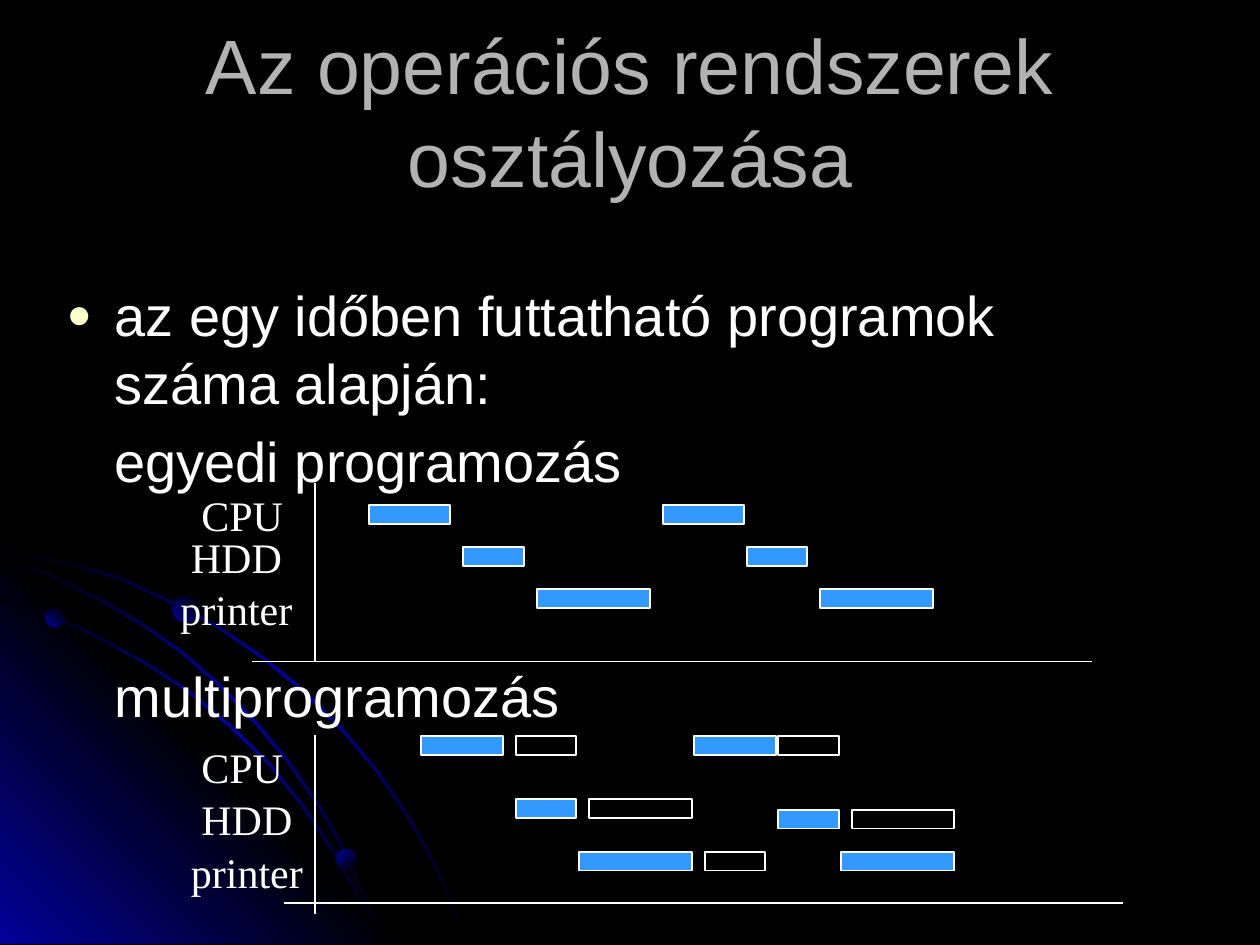
from lxml import etree
from pptx import Presentation, util as u
from pptx.dml.color import RGBColor
from pptx.enum import shapes, text
from pptx.oxml import parse_xml
from pptx.oxml.ns import nsdecls, qn

BLACK = RGBColor(0x00, 0x00, 0x00)
NAVY = RGBColor(0x01, 0x01, 0x99)
GREY = RGBColor(0xB2, 0xB2, 0xB2)
WHITE = RGBColor(0xFF, 0xFF, 0xFF)
BLUE = RGBColor(0x33, 0x99, 0xFF)
CREAM = RGBColor(0xFF, 0xFF, 0xCC)

TITLE = "Az operációs rendszerek osztályozása"
# text, bulleted, space before in points
BODY = [
    ("az egy időben futtatható programok száma alapján:", True, 6.4),
    ("egyedi programozás", False, 6.4),
    ("multiprogramozás", False, 96),
]

# Timing diagrams on a grid of 12 units to the inch
UNIT = 1 / 12
BAR_HEIGHT, BAR_INSET = 0.15, 0.01
DIAGRAMS = [
    {  # single programming
        "labels": [("CPU", 18, 46, 13), ("HDD", 17, 50, 13), ("printer", 16, 55, 16)],
        "axes": [(24, 63, 104, 63), (30, 46, 30, 63)],
        # column, row, length
        "filled": [(35, 48, 8), (44, 52, 6), (51, 56, 11),
                   (63, 48, 8), (71, 52, 6), (78, 56, 11)],
        "hollow": [],
    },
    {  # multiprogramming
        "labels": [("CPU", 18, 70, 13), ("HDD", 18, 75, 13), ("printer", 17, 80, 16)],
        "axes": [(27, 86, 107, 86), (30, 70, 30, 87)],
        "filled": [(40, 70, 8), (49, 76, 6), (55, 81, 11),
                   (66, 70, 8), (74, 77, 6), (80, 81, 11)],
        "hollow": [(49, 70, 6), (56, 76, 10), (67, 81, 6),
                   (81, 77, 10), (74, 70, 6)],
    },
]

# Background: upper edges of the arcs, the corner glow and the planets
ARC_WIDTH = 0.015
ARCS = [
    [(0, 4.35), (0.57, 4.47), (0.98, 4.59), (1.36, 4.77), (1.74, 4.97), (2.09, 5.21),
     (2.42, 5.48), (2.72, 5.78), (3, 6.11), (3.25, 6.48), (3.39, 6.73), (3.52, 6.98),
     (3.62, 7.23), (3.72, 7.49)],
    [(0, 4.75), (0.41, 4.88), (0.79, 5.05), (1.17, 5.26), (1.52, 5.49), (1.84, 5.76),
     (2.15, 6.06), (2.42, 6.4), (2.66, 6.76), (2.86, 7.12), (2.96, 7.3), (3.03, 7.49)],
    [(0, 4.42), (0.39, 4.55), (0.76, 4.73), (1.11, 4.93), (1.44, 5.16), (1.75, 5.43),
     (2.04, 5.73), (2.29, 6.03), (2.54, 6.39), (2.69, 6.65), (2.82, 6.93), (2.94, 7.2),
     (3.03, 7.49)],
]
GLOW = [(0, 4.27), (3.22, 7.49), (0, 7.49)]
PLANETS = [(0.36, 4.83, 0.15, 315), (2.67, 6.74, 0.16, 45), (1.37, 4.73, 0.21, 315)]

deck = Presentation()
deck.slide_width, deck.slide_height = u.Inches(10), u.Inches(7.5)
page = deck.slides.add_slide(deck.slide_layouts[5])
page.background.fill.solid()
page.background.fill.fore_color.rgb = BLACK


def inches(*values):
    return [u.Inches(value) for value in values]


def style_text(para, font, size, color):
    for span in para.runs:
        span.font.name, span.font.size = font, u.Pt(size)
        span.font.color.rgb = color


def fill_gradient(shape, colors, angle):
    shape.shadow.inherit = False
    shape.line.fill.background()
    step = 100000 // (len(colors) - 1)
    stops = "".join(f'<a:gs pos="{i * step}"><a:srgbClr val="{color}"/></a:gs>'
                    for i, color in enumerate(colors))
    gradient = parse_xml(f'<a:gradFill {nsdecls("a")} rotWithShape="1"><a:gsLst>{stops}'
                         f'</a:gsLst><a:lin ang="{angle * 60000}" scaled="0"/></a:gradFill>')
    shape.element.spPr.find(qn("a:ln")).addprevious(gradient)


def add_outline(points, colors, angle):
    start, *rest = [inches(*point) for point in points]
    builder = page.shapes.build_freeform(*start)
    builder.add_line_segments(rest, close=True)
    fill_gradient(builder.convert_to_shape(), colors, angle)


def add_bar(column, row, length, filled):
    bar = page.shapes.add_shape(
        shapes.MSO_SHAPE.RECTANGLE,
        *inches(column * UNIT + BAR_INSET, row * UNIT + BAR_INSET,
                length * UNIT - 2 * BAR_INSET, BAR_HEIGHT))
    bar.shadow.inherit = False
    if filled:
        bar.fill.solid()
        bar.fill.fore_color.rgb = BLUE
    else:
        bar.fill.background()
    bar.line.color.rgb, bar.line.width = WHITE, u.Pt(1)


def add_axis(*ends):
    axis = page.shapes.add_connector(shapes.MSO_CONNECTOR.STRAIGHT,
                                     *inches(*(end * UNIT for end in ends)))
    axis.line.color.rgb, axis.line.width = WHITE, u.Pt(1)
    etree.SubElement(axis.element.spPr, qn("a:effectLst"))


def add_label(name, column, row, width):
    box = page.shapes.add_textbox(*inches(column * UNIT, row * UNIT, width * UNIT, 0.5))
    box.text_frame.word_wrap = True
    box.text_frame.text = name
    style_text(box.text_frame.paragraphs[0], "Times New Roman", 24, WHITE)


# Background
for number, edge in enumerate(ARCS):
    lower = [(max(x - ARC_WIDTH, 0), min(y + ARC_WIDTH, 7.49)) for x, y in reversed(edge)]
    add_outline(edge + lower, [BLACK, NAVY, BLACK], 45)
    if number == 0:
        add_outline(GLOW, [NAVY, BLACK, NAVY], 315)
for left, top, size, angle in PLANETS:
    planet = page.shapes.add_shape(shapes.MSO_SHAPE.OVAL, *inches(left, top, size, size))
    fill_gradient(planet, [NAVY, BLACK], angle)

# Title, in front of the background
title = page.shapes.title
planet.element.addnext(title.element)
title.left, title.top, title.width, title.height = inches(0.75, 0.25, 8.5, 1.25)
title.text_frame.text = TITLE
title.text_frame.auto_size = text.MSO_AUTO_SIZE.NONE
title.text_frame.vertical_anchor = text.MSO_ANCHOR.MIDDLE
title.text_frame.paragraphs[0].alignment = text.PP_ALIGN.CENTER
style_text(title.text_frame.paragraphs[0], "Arial", 44, GREY)

# Body text
body = page.shapes.add_textbox(*inches(0.43, 2.18, 9, 4.82)).text_frame
body.word_wrap = True
body.text = "\n".join(line for line, _, _ in BODY)
for para, (_, bulleted, space) in zip(body.paragraphs, BODY):
    para.space_before = u.Pt(space)
    style_text(para, "Arial", 32, WHITE)
    props = para._p.get_or_add_pPr()
    props.set("marL", str(u.Inches(0.38)))
    props.set("indent", str(u.Inches(-0.38 if bulleted else 0)))
    if bulleted:
        color = etree.SubElement(props, qn("a:buClr"))
        etree.SubElement(color, qn("a:srgbClr"), val=str(CREAM))
        etree.SubElement(props, qn("a:buSzPct"), val="75000")
        etree.SubElement(props, qn("a:buFont"), typeface="Arial")
        etree.SubElement(props, qn("a:buChar"), char="●")

# Timing diagrams
for diagram in DIAGRAMS:
    for label in diagram["labels"]:
        add_label(*label)
    for axis_ends in diagram["axes"]:
        add_axis(*axis_ends)
    for kind in ("filled", "hollow"):
        for slot in diagram[kind]:
            add_bar(*slot, filled=kind == "filled")

deck.save("out.pptx")
